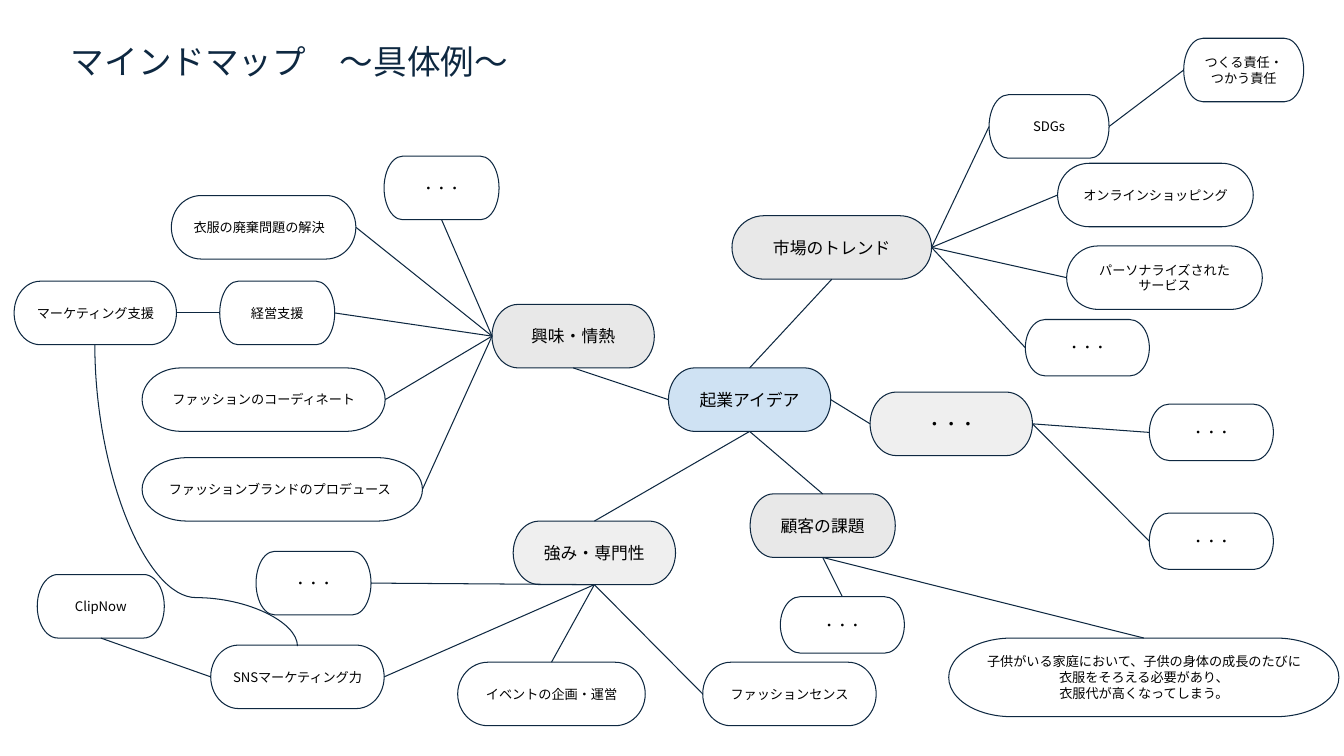
"""Build a mind map slide on startup ideas."""
from lxml.etree import SubElement
from pptx import Presentation
from pptx.dml.color import RGBColor
from pptx.enum.lang import MSO_LANGUAGE_ID
from pptx.enum.shapes import MSO_CONNECTOR, MSO_SHAPE
from pptx.enum.text import MSO_ANCHOR, MSO_AUTO_SIZE, PP_ALIGN
from pptx.oxml.ns import qn
from pptx.util import Inches, Pt

FONT = "Noto Sans CJK JP"
NAVY = RGBColor(0x0E, 0x28, 0x41)
BLACK = RGBColor(0, 0, 0)
WHITE = RGBColor(0xFF, 0xFF, 0xFF)
GRAY = RGBColor(0xE8, 0xE8, 0xE8)
PALE = RGBColor(0xEF, 0xEF, 0xEF)
BLUE = RGBColor(0xCF, 0xE2, 0xF3)
TOP, LEFT, BASE, RIGHT = range(4)


def write(shape, text, size=9.33, color=BLACK, align=PP_ALIGN.CENTER, anchor=MSO_ANCHOR.MIDDLE):
    frame = shape.text_frame
    frame.text = text
    frame.word_wrap = True
    frame.auto_size = MSO_AUTO_SIZE.NONE
    frame.vertical_anchor = anchor
    frame.margin_left = frame.margin_right = Pt(9.6)
    frame.margin_top = frame.margin_bottom = Pt(9.6)
    for para in frame.paragraphs:
        para.alignment = align
        para.line_spacing = 1.0
        para.space_before = Pt(0)
        for run in para.runs:
            font = run.font
            font.name = FONT
            font.size = Pt(size)
            font.color.rgb = color
            font.language_id = MSO_LANGUAGE_ID.JAPANESE
            SubElement(run._r.get_or_add_rPr(), qn("a:ea"), typeface=FONT)


def style(line):
    line.line.color.rgb = NAVY
    line.line.width = Pt(0.75)
    SubElement(line._element.spPr, qn("a:effectLst"))


deck = Presentation()
deck.slide_width = Inches(13.33)
deck.slide_height = Inches(7.5)
slide = deck.slides.add_slide(deck.slide_layouts[5])
shapes = slide.shapes

title = shapes.title
title.left, title.top = Inches(0.57), Inches(0.27)
title.width, title.height = Inches(7.25), Inches(0.74)
write(title, "マインドマップ　～具体例～", size=24, color=NAVY,
      align=PP_ALIGN.LEFT, anchor=MSO_ANCHOR.TOP)

topics = [
    ("idea", "起業アイデア", 6.63, 3.65, 1.61, BLUE),
    ("trend", "市場のトレンド", 7.26, 2.14, 1.98, GRAY),
    ("needs", "顧客の課題", 7.44, 4.9, 1.44, GRAY),
    ("skill", "強み・専門性", 5.09, 5.17, 1.61, PALE),
    ("love", "興味・情熱", 4.88, 3.02, 1.61, GRAY),
    ("more", "・・・", 8.63, 3.89, 1.61, PALE),
]
leaves = [
    ("shop", "オンラインショッピング", 10.49, 1.62, 1.94, 0.63),
    ("custom", "パーソナライズされたサービス", 10.58, 2.44, 1.94, 0.63),
    ("goals", "SDGs", 9.81, 0.94, 1.19, 0.63),
    ("duty", "つくる責任・つかう責任", 11.74, 0.38, 1.19, 0.63),
    ("trend etc", "・・・", 10.17, 3.17, 1.23, 0.56),
    ("sense", "ファッションセンス", 6.97, 6.57, 1.72, 0.63),
    ("social", "SNSマーケティング力", 2.09, 6.4, 1.72, 0.63),
    ("event", "イベントの企画・運営", 4.54, 6.57, 1.86, 0.63),
    ("skill etc", "・・・", 2.54, 5.47, 1.14, 0.63),
    ("video", "ClipNow", 0.37, 5.7, 1.26, 0.63),
    ("waste", "衣服の廃棄問題の解決", 1.7, 1.94, 1.83, 0.63),
    ("brand", "ファッションブランドのプロデュース", 1.41, 4.54, 2.78, 0.63),
    ("manage", "経営支援", 2.18, 2.79, 1.14, 0.63),
    ("market", "マーケティング支援", 0.14, 2.79, 1.61, 0.63),
    ("outfit", "ファッションのコーディネート", 1.41, 3.65, 2.41, 0.63),
    ("love etc", "・・・", 3.81, 1.55, 1.14, 0.63),
    ("kids", "子供がいる家庭において、子供の身体の成長のたびに衣服をそろえる必要があり、\n"
     "衣服代が高くなってしまう。", 9.41, 6.33, 3.87, 0.78),
    ("needs etc", "・・・", 7.74, 5.92, 1.23, 0.56),
    ("more one", "・・・", 11.4, 4.01, 1.23, 0.56),
    ("more two", "・・・", 11.4, 5.09, 1.23, 0.56),
]
boxes = [(key, text, (x, y, w, 0.63), fill, 12) for key, text, x, y, w, fill in topics]
boxes += [(key, text, place, WHITE, 9.33) for key, text, *place in leaves]

nodes = {}
for key, text, place, fill, size in boxes:
    node = shapes.add_shape(MSO_SHAPE.FLOWCHART_TERMINATOR, *map(Inches, place))
    node.shadow.inherit = False
    node.fill.solid()
    node.fill.fore_color.rgb = fill
    node.line.color.rgb = NAVY
    node.line.width = Pt(0.75)
    side = PP_ALIGN.LEFT if key in ("waste", "brand") else PP_ALIGN.CENTER
    write(node, text, size=size, align=side)
    nodes[key] = node

links = [
    ("idea", TOP, "trend", BASE),
    ("idea", LEFT, "love", BASE),
    ("idea", BASE, "skill", TOP),
    ("idea", BASE, "needs", TOP),
    ("idea", RIGHT, "more", LEFT),
    ("trend", RIGHT, "goals", LEFT),
    ("trend", RIGHT, "shop", LEFT),
    ("trend", RIGHT, "custom", LEFT),
    ("trend", RIGHT, "trend etc", LEFT),
    ("goals", RIGHT, "duty", LEFT),
    ("love", LEFT, "waste", RIGHT),
    ("love", LEFT, "manage", RIGHT),
    ("love", LEFT, "outfit", RIGHT),
    ("love", LEFT, "brand", RIGHT),
    ("love", LEFT, "love etc", BASE),
    ("manage", LEFT, "market", RIGHT),
    ("skill", BASE, "event", TOP),
    ("skill", BASE, "social", RIGHT),
    ("skill", BASE, "sense", LEFT),
    ("skill", BASE, "skill etc", RIGHT),
    ("social", LEFT, "video", BASE),
    ("needs", BASE, "kids", TOP),
    ("needs", BASE, "needs etc", TOP),
    ("more", RIGHT, "more one", LEFT),
    ("more", RIGHT, "more two", LEFT),
]
for start, exit, end, entry in links:
    line = shapes.add_connector(MSO_CONNECTOR.STRAIGHT, 0, 0, 0, 0)
    line.begin_connect(nodes[start], exit)
    line.end_connect(nodes[end], entry)
    style(line)

curve = shapes.add_connector(MSO_CONNECTOR.CURVE, Inches(3.44), Inches(3.91),
                             Inches(0.45), Inches(5.92))
style(curve)
form = curve._element.spPr
form.find(qn("a:xfrm")).set("rot", "16200000")
guides = form.find(qn("a:prstGeom")).find(qn("a:avLst"))
SubElement(guides, qn("a:gd"), name="adj1", fmla="val 83900")

deck.save("out.pptx")
